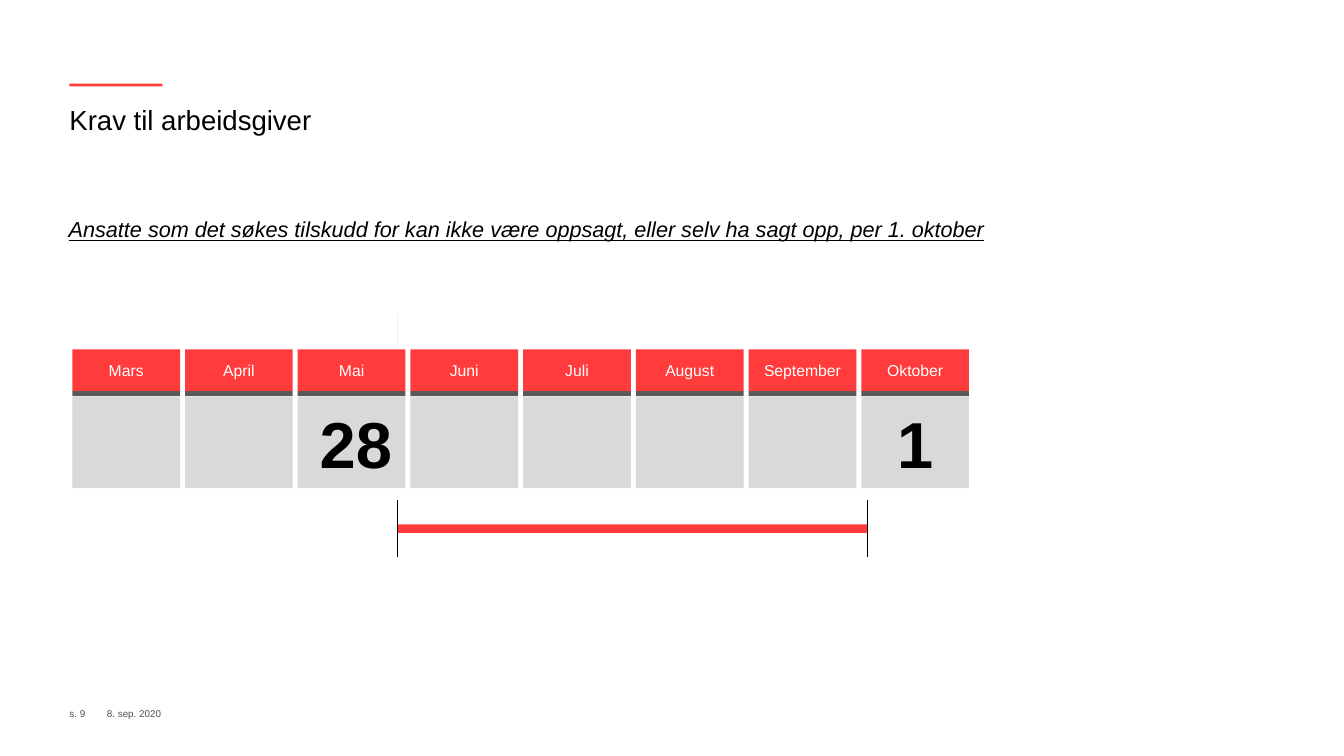
import pptx
import pptx.util
import pptx.dml.color
import pptx.enum.shapes
import pptx.enum.text
import pptx.oxml.ns
from lxml import etree

Inches, Pt = pptx.util.Inches, pptx.util.Pt
ALIGN, ANCHOR = pptx.enum.text.PP_ALIGN, pptx.enum.text.MSO_ANCHOR

# Content
TITLE = "Krav til arbeidsgiver"
REQUIREMENT = ("Ansatte som det søkes tilskudd for kan ikke være oppsagt, "
               "eller selv ha sagt opp, per 1. oktober")
PAGE, DATE = "s. 9", "8. sep. 2020"
MONTHS = ["Mars", "April", "Mai", "Juni", "Juli", "August", "September", "Oktober"]
DAYS = {"Mai": ("28", 0.12), "Oktober": ("1", 0)}  # day, left inset
RED, DARK, GREY, BLACK, FOOTER = "FF3B3B", "595959", "D9D9D9", "000000", "4F4F4F"

# Calendar geometry
CALENDAR_LEFT, PITCH, MONTH_WIDTH = 1.02, 1.59, 1.52
BANDS = {"month": (4.93, 0.59), "rule": (5.52, 0.07), "day": (5.6, 1.29)}
PERIOD_START, PERIOD_END = 5.61, 12.23

deck = pptx.Presentation()
deck.slide_width, deck.slide_height = Inches(18.96), Inches(10.67)
slide = deck.slides.add_slide(deck.slide_layouts[6])


def colour(hex_value):
    return pptx.dml.color.RGBColor.from_string(hex_value)


def write(shape, text, size, ink, bold=False, italic=False, underline=False,
          align=ALIGN.LEFT, anchor=ANCHOR.TOP, left_inset=0):
    frame = shape.text_frame
    frame.word_wrap = True
    frame.vertical_anchor = anchor
    frame.margin_left = Inches(left_inset)
    frame.margin_right = frame.margin_top = frame.margin_bottom = 0
    paragraph = frame.paragraphs[0]
    paragraph.alignment = align
    run = paragraph.add_run()
    run.text = text
    font = run.font
    font.name, font.size = "Arial", Pt(size)
    font.bold, font.italic, font.underline = bold, italic, underline
    font.color.rgb = colour(ink)


def textbox(left, top, width, height, text, **style):
    box = slide.shapes.add_textbox(Inches(left), Inches(top), Inches(width), Inches(height))
    write(box, text, **style)


def block(left, top, width, height, fill):
    shape = slide.shapes.add_shape(pptx.enum.shapes.MSO_SHAPE.RECTANGLE, Inches(left),
                                   Inches(top), Inches(width), Inches(height))
    shape.shadow.inherit = False
    shape.fill.solid()
    shape.fill.fore_color.rgb = colour(fill)
    shape.line.fill.background()
    return shape


def vertical_line(x, top, bottom, ink, opacity=100):
    line = slide.shapes.add_connector(pptx.enum.shapes.MSO_CONNECTOR.STRAIGHT, Inches(x),
                                      Inches(top), Inches(x), Inches(bottom))
    line.line.width = Pt(0.5)
    line.line.color.rgb = colour(ink)
    qn = pptx.oxml.ns.qn
    properties = line._element.spPr
    etree.SubElement(properties, qn("a:effectLst"))
    if opacity < 100:
        ink_element = properties.find(".//" + qn("a:srgbClr"))
        etree.SubElement(ink_element, qn("a:alpha"), val=str(opacity * 1000))


# Heading and requirement
block(0.98, 1.18, 1.31, 0.04, RED)
textbox(0.98, 1.46, 17, 0.94, TITLE, size=28, ink=BLACK)
textbox(0.97, 3.05, 14.1, 0.5, REQUIREMENT, size=22, ink=BLACK, italic=True, underline=True)

# Calendar
for column, month in enumerate(MONTHS):
    left = CALENDAR_LEFT + column * PITCH
    name_cell, rule, day_cell = [
        block(left, top, MONTH_WIDTH, height, fill)
        for (top, height), fill in zip(BANDS.values(), (RED, DARK, GREY))]
    write(name_cell, month, size=16, ink="FFFFFF", align=ALIGN.CENTER, anchor=ANCHOR.MIDDLE)
    if month in DAYS:
        day, inset = DAYS[month]
        write(day_cell, day, size=66, ink=BLACK, bold=True, align=ALIGN.CENTER,
              anchor=ANCHOR.MIDDLE, left_inset=inset)

# Period from 28 May to 1 October
vertical_line(PERIOD_START, 4.45, 4.85, "320065", opacity=10)
block(PERIOD_START, 7.4, PERIOD_END - PERIOD_START, 0.12, RED)
for x in (PERIOD_START, PERIOD_END):
    vertical_line(x, 7.06, 7.86, BLACK)

# Footer
for left, width, text in ((0.98, 0.53, PAGE), (1.51, 1.34, DATE)):
    textbox(left, 9.98, width, 0.17, text, size=10, ink=FOOTER, anchor=ANCHOR.MIDDLE)

deck.save("out.pptx")
